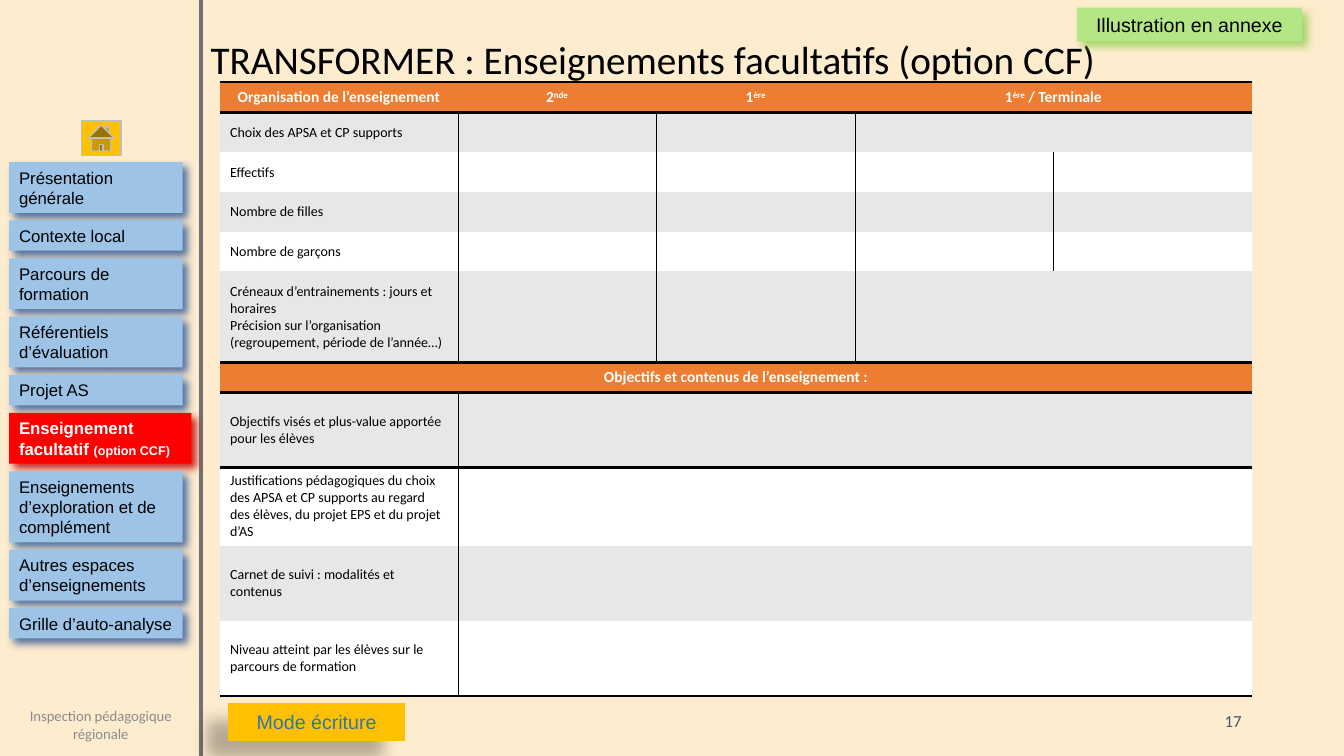
from dataclasses import dataclass
from itertools import accumulate
from typing import Any, NamedTuple

from lxml.etree import SubElement
from pptx import Presentation
from pptx.dml.color import RGBColor
from pptx.enum.shapes import MSO_CONNECTOR, MSO_SHAPE
from pptx.enum.text import MSO_ANCHOR, MSO_AUTO_SIZE, PP_ALIGN
from pptx.oxml.ns import qn
from pptx.slide import Slide
from pptx.util import Emu, Pt


@dataclass(frozen=True)
class Theme:
    cream: str = "FDECCE"
    divider: str = "767171"
    black: str = "000000"
    white: str = "FFFFFF"
    sky: str = "9DC3E6"
    navy: str = "2F5597"
    red: str = "FF0000"
    dark_red: str = "C00000"
    amber: str = "FFC000"
    silver: str = "BFBFBF"
    blue: str = "2E75B6"
    lime: str = "B4E686"
    green: str = "92D050"
    orange: str = "ED7D31"
    band: str = "E7E7E7"
    footer_grey: str = "8C8C8C"
    slate: str = "44546A"
    title: float = 28
    button: float = 14
    menu: float = 12
    heading: float = 11
    footer: float = 10.5
    body: float = 10
    remark: float = 9
    thin: float = 0.25
    thick: float = 2.25


THEME = Theme()
COLUMNS, ROWS = 160, 90
MODULE = 76200


class Area(NamedTuple):
    column: float
    row: float
    columns: float
    rows: float


class Words(NamedTuple):
    text: str
    size: float | None = None
    raised: bool = False


class Style(NamedTuple):
    size: float
    color: str
    face: str = "Arial"
    bold: bool = False
    align: PP_ALIGN = PP_ALIGN.LEFT
    anchor: MSO_ANCHOR = MSO_ANCHOR.MIDDLE


class Shadow(NamedTuple):
    color: str
    opacity: int
    blur: float = 6
    distance: float = 5
    angle: int = 45


class Panel(NamedTuple):
    area: Area
    lines: tuple[tuple[Words, ...], ...]
    style: Style
    fill: str | None = None
    shadow: Shadow | None = None
    preset: MSO_SHAPE = MSO_SHAPE.RECTANGLE
    outline: str | None = None


class MenuEntry(NamedTuple):
    lines: int
    words: tuple[Words, ...]
    current: bool = False


class TableRow(NamedTuple):
    rows: float
    spans: tuple[int, ...]
    cells: tuple[tuple[tuple[Words, ...], ...], ...]
    heading: bool = False


MENU_LEFT, MENU_TOP, MENU_GAP = 1.08, 19.3, 0.9
MENU_PADDING, MENU_LINE = 1.2, 2.42
MENU = (
    MenuEntry(2, (Words("Présentation générale"),)),
    MenuEntry(1, (Words("Contexte local"),)),
    MenuEntry(2, (Words("Parcours de formation"),)),
    MenuEntry(2, (Words("Référentiels d’évaluation"),)),
    MenuEntry(1, (Words("Projet AS"),)),
    MenuEntry(2, (Words("Enseignement facultatif "), Words("(option CCF)", THEME.remark)), True),
    MenuEntry(3, (Words("Enseignements d’exploration et de complément"),)),
    MenuEntry(2, (Words("Autres espaces d’enseignements"),)),
    MenuEntry(1, (Words("Grille d’auto-analyse"),)),
)

TABLE_COLUMNS = (28.3,) + (23.64,) * 4
CLASSES, LEVELS, WHOLE, ANSWER = (1, 1, 1, 2), (1,) * 5, (5,), (1, 4)
TEACHING = (
    TableRow(3.68, CLASSES, (
        ((Words("Organisation de l’enseignement"),),),
        ((Words("2"), Words("nde", raised=True)),),
        ((Words("1"), Words("ère", raised=True)),),
        ((Words("1"), Words("ère", raised=True), Words(" / Terminale")),),
    ), True),
    TableRow(4.72, CLASSES, (((Words("Choix des APSA et CP supports"),),),)),
    TableRow(4.72, LEVELS, (((Words("Effectifs"),),),)),
    TableRow(4.72, LEVELS, (((Words("Nombre de filles"),),),)),
    TableRow(4.72, LEVELS, (((Words("Nombre de garçons"),),),)),
    TableRow(10.84, CLASSES, ((
        (Words("Créneaux d’entrainements : jours et horaires"),),
        (Words("Précision sur l’organisation (regroupement, période de l’année…)"),),
    ),)),
    TableRow(3.58, WHOLE, (((Words("Objectifs et contenus de l’enseignement :"),),),), True),
    TableRow(8.95, ANSWER, (((Words("Objectifs visés et plus-value apportée pour les élèves"),),),)),
    TableRow(8.95, ANSWER, (((Words("Justifications pédagogiques du choix des APSA et CP supports "
                                    "au regard des élèves, du projet EPS et du projet d’AS"),),),)),
    TableRow(8.95, ANSWER, (((Words("Carnet de suivi : modalités et contenus"),),),)),
    TableRow(8.95, ANSWER, (((Words("Niveau atteint par les élèves sur le parcours de formation"),),),)),
)
THICK_RULES = {0, 1, 6, 7, 8, len(TEACHING)}


def grid(units: float) -> Emu:
    return Emu(round(units * MODULE))


def rgb(color: str) -> RGBColor:
    return RGBColor.from_string(color)


def assign(target: Any, values: dict[str, Any]) -> None:
    for attribute, value in values.items():
        setattr(target, attribute, value)


def write(frame: Any, lines: tuple[tuple[Words, ...], ...], style: Style) -> None:
    for index, line in enumerate(lines or ((),)):
        paragraph = frame.add_paragraph() if index else frame.paragraphs[0]
        paragraph.alignment = style.align
        for words in line:
            run = paragraph.add_run()
            run.text = words.text
            assign(run.font, {"size": Pt(words.size or style.size), "name": style.face, "bold": style.bold})
            run.font.color.rgb = rgb(style.color)
            if words.raised:
                run.font._element.set("baseline", "30000")
        SubElement(paragraph._p, qn("a:endParaRPr"), sz=str(round(style.size * 100)))


def cast_shadow(shape: Any, shadow: Shadow) -> None:
    effects = shape._element.spPr.find(qn("a:effectLst"))
    outer = SubElement(effects, qn("a:outerShdw"), blurRad=str(Pt(shadow.blur)), dist=str(Pt(shadow.distance)),
                       dir=str(shadow.angle * 60000), algn="tl", rotWithShape="0")
    color = SubElement(outer, qn("a:srgbClr"), val=shadow.color)
    SubElement(color, qn("a:alpha"), val=str(shadow.opacity * 1000))


def draw_panel(slide: Slide, panel: Panel) -> None:
    place = [grid(units) for units in panel.area]
    if panel.fill:
        shape = slide.shapes.add_shape(panel.preset, *place)
        shape.shadow.inherit = False
        shape.fill.solid()
        shape.fill.fore_color.rgb = rgb(panel.fill)
        if panel.outline:
            shape.line.color.rgb = rgb(panel.outline)
            shape.line.width = Pt(1)
        else:
            shape.line.fill.background()
        if panel.shadow:
            cast_shadow(shape, panel.shadow)
    else:
        shape = slide.shapes.add_textbox(*place)
    assign(shape.text_frame, {"word_wrap": True, "auto_size": MSO_AUTO_SIZE.NONE,
                              "vertical_anchor": panel.style.anchor})
    write(shape.text_frame, panel.lines, panel.style)


def draw_menu(slide: Slide) -> None:
    top = MENU_TOP
    for entry in MENU:
        rows = MENU_PADDING + MENU_LINE * entry.lines
        columns, ink, fill, shade = ((21.7, THEME.white, THEME.red, THEME.dark_red) if entry.current
                                     else (20.66, THEME.black, THEME.sky, THEME.navy))
        draw_panel(slide, Panel(Area(MENU_LEFT, top, columns, rows), (entry.words,),
                                Style(THEME.menu, ink, bold=entry.current), fill, Shadow(shade, 84)))
        top += rows + MENU_GAP


def rule(cell: Any, side: str, width: float) -> None:
    border = SubElement(cell._tc.get_or_add_tcPr(), qn(f"a:ln{side}"), w=str(Pt(width)))
    if width:
        SubElement(SubElement(border, qn("a:solidFill")), qn("a:srgbClr"), val=THEME.black)
    else:
        SubElement(border, qn("a:noFill"))


def draw_table(slide: Slide) -> None:
    area = Area(26.2, 9.75, sum(TABLE_COLUMNS), sum(row.rows for row in TEACHING))
    table = slide.shapes.add_table(len(TEACHING), len(TABLE_COLUMNS), *map(grid, area)).table
    assign(table, {"first_row": False, "horz_banding": False})
    for column, units in zip(table.columns, TABLE_COLUMNS):
        column.width = grid(units)
    heading = Style(THEME.heading, THEME.white, "Calibri", True, PP_ALIGN.CENTER)
    body = Style(THEME.body, THEME.black, "Calibri")
    for index, row in enumerate(TEACHING):
        table.rows[index].height = grid(row.rows)
        fill = THEME.orange if row.heading else THEME.band if index % 2 else THEME.white
        top, bottom = (THEME.thick if edge in THICK_RULES else 0 for edge in (index, index + 1))
        for position, (span, end) in enumerate(zip(row.spans, accumulate(row.spans))):
            start = end - span
            left = 0 if row.heading or start == 0 else THEME.thin
            right = 0 if row.heading or end == len(TABLE_COLUMNS) else THEME.thin
            for column in range(start, end):
                cell = table.cell(index, column)
                for side, width in zip("LRTB", (left, right, top, bottom)):
                    rule(cell, side, width)
                cell.fill.solid()
                cell.fill.fore_color.rgb = rgb(fill)
                cell.vertical_anchor = MSO_ANCHOR.MIDDLE
                lines = row.cells[position] if column == start and position < len(row.cells) else ()
                write(cell.text_frame, lines, heading if row.heading else body)
            if span > 1:
                table.cell(index, start).merge(table.cell(index, end - 1))


def draw_divider(slide: Slide) -> None:
    divider = slide.shapes.add_connector(MSO_CONNECTOR.STRAIGHT, grid(23.9), 0, grid(23.9), grid(ROWS))
    divider.line.color.rgb = rgb(THEME.divider)
    divider.line.width = Pt(3)
    SubElement(divider._element.spPr, qn("a:effectLst"))


PANELS = (
    Panel(Area(23.9, 3.6, 131, 6.84),
          ((Words("TRANSFORMER : Enseignements facultatifs (option CCF)"),),),
          Style(THEME.title, THEME.black, "Calibri", anchor=MSO_ANCHOR.TOP)),
    Panel(Area(9.7, 14.4, 4.7, 4.1), (), Style(THEME.body, THEME.black), THEME.amber,
          preset=MSO_SHAPE.ACTION_BUTTON_HOME, outline=THEME.silver),
    Panel(Area(27.2, 83.7, 21, 4.5), ((Words("Mode écriture"),),),
          Style(THEME.button, THEME.blue, align=PP_ALIGN.CENTER), THEME.amber,
          Shadow(THEME.black, 28, 11.8, 19.7, 141), MSO_SHAPE.ACTION_BUTTON_CUSTOM),
    Panel(Area(128.2, 0.9, 26.8, 4.04), ((Words("Illustration en annexe"),),),
          Style(THEME.button, THEME.black, align=PP_ALIGN.CENTER), THEME.lime, Shadow(THEME.green, 80)),
    Panel(Area(1.7, 84.2, 20.6, 4.1), ((Words("Inspection pédagogique régionale"),),),
          Style(THEME.footer, THEME.footer_grey, "Calibri", align=PP_ALIGN.CENTER)),
    Panel(Area(143.2, 83.4, 5.8, 4.8), ((Words("17"),),),
          Style(THEME.menu, THEME.slate, "Calibri", align=PP_ALIGN.RIGHT)),
)


def main() -> None:
    presentation = Presentation()
    assign(presentation, {"slide_width": grid(COLUMNS), "slide_height": grid(ROWS)})
    slide = presentation.slides.add_slide(presentation.slide_layouts[6])
    slide.background.fill.solid()
    slide.background.fill.fore_color.rgb = rgb(THEME.cream)
    draw_divider(slide)
    draw_menu(slide)
    for panel in PANELS:
        draw_panel(slide, panel)
    draw_table(slide)
    presentation.save("out.pptx")


if __name__ == "__main__":
    main()
